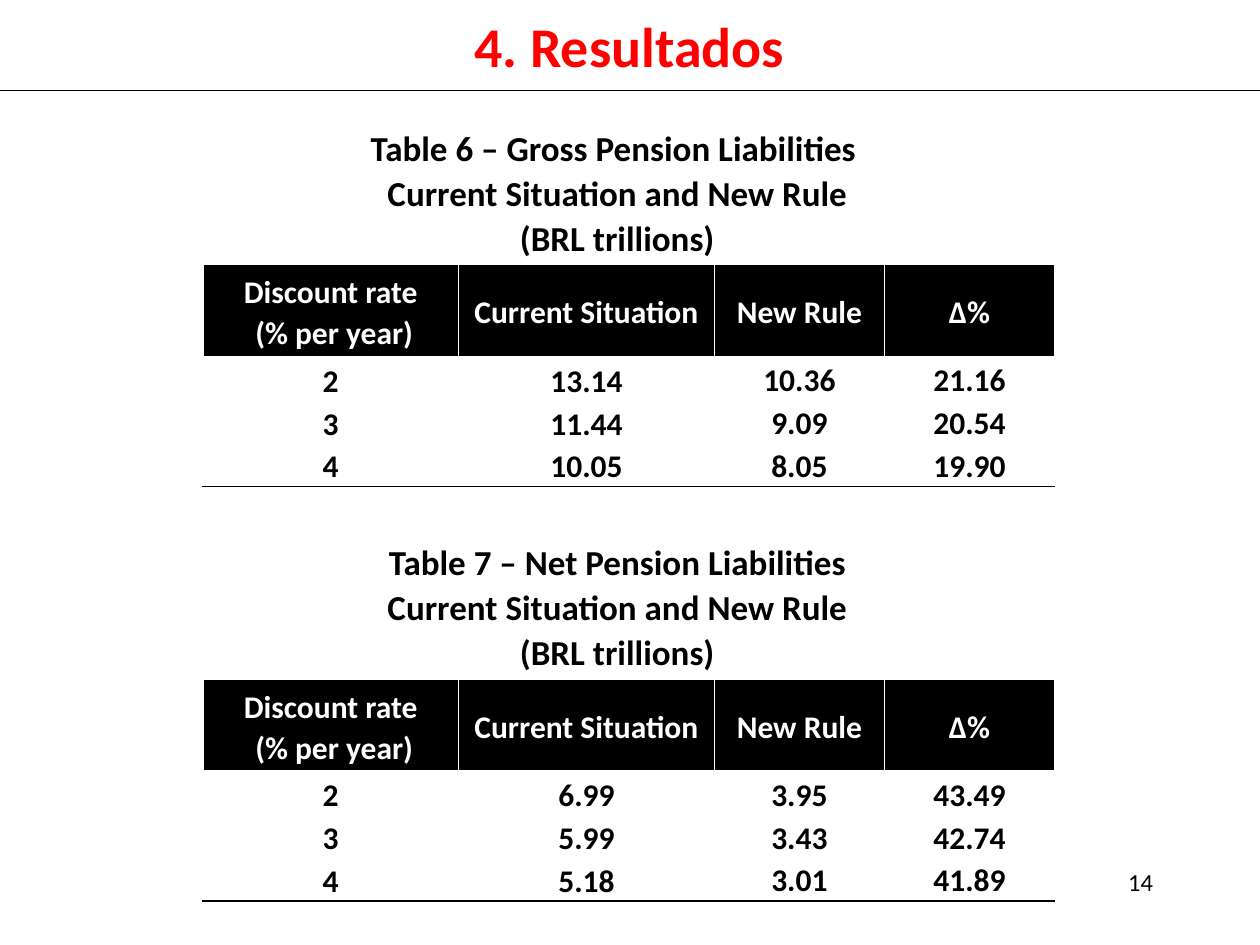
from dataclasses import dataclass

from lxml.etree import SubElement
from pptx import Presentation
from pptx.dml.color import RGBColor
from pptx.enum.shapes import MSO_CONNECTOR
from pptx.enum.text import MSO_ANCHOR, PP_ALIGN
from pptx.oxml.ns import qn
from pptx.slide import Slide
from pptx.table import _Cell
from pptx.text.text import TextFrame
from pptx.util import Inches, Pt

BLACK = RGBColor(0, 0, 0)
WHITE = RGBColor(255, 255, 255)
RED = RGBColor(255, 0, 0)
FONT = "Calibri"
LINE_SPACING = 1.07

COLUMN_WIDTHS = (2.03, 2.03, 1.35, 1.35)
HEADER_HEIGHT = 0.72
BODY_HEIGHT = 0.34
TABLE_LEFT = 1.61
CAPTION_HEIGHT = 1.17
HEADERS = ("Discount rate\n (% per year)", "Current Situation", "New Rule", "Δ%")


@dataclass(frozen=True)
class LiabilityTable:
    caption: str
    top: float
    rows: tuple[tuple[str, ...], ...]


LIABILITY_TABLES = (
    LiabilityTable(
        "Table 6 – Gross Pension Liabilities ",
        0.93,
        (
            ("2", "13.14", "10.36", "21.16"),
            ("3", "11.44", "9.09", "20.54"),
            ("4", "10.05", "8.05", "19.90"),
        ),
    ),
    LiabilityTable(
        "Table 7 – Net Pension Liabilities",
        4.22,
        (
            ("2", "6.99", "3.95", "43.49"),
            ("3", "5.99", "3.43", "42.74"),
            ("4", "5.18", "3.01", "41.89"),
        ),
    ),
)


def write_text(frame: TextFrame, text: str, size: float, color: RGBColor,
               bold: bool = True, alignment: PP_ALIGN = PP_ALIGN.CENTER,
               spacing: float = LINE_SPACING) -> None:
    frame.text = text
    for paragraph in frame.paragraphs:
        paragraph.alignment = alignment
        paragraph.line_spacing = spacing
        paragraph.font.name = FONT
        paragraph.font.size = Pt(size)
        paragraph.font.bold = bold
        paragraph.font.color.rgb = color


def add_text_box(slide: Slide, left: float, top: float, width: float,
                 height: float) -> TextFrame:
    box = slide.shapes.add_textbox(
        Inches(left), Inches(top), Inches(width), Inches(height))
    box.text_frame.word_wrap = True
    return box.text_frame


def set_border(cell: _Cell, side: str, color: RGBColor, width: float) -> None:
    properties = cell._tc.get_or_add_tcPr()
    border = SubElement(properties, qn(f"a:ln{side}"), w=str(Pt(width)))
    fill = SubElement(border, qn("a:solidFill"))
    SubElement(fill, qn("a:srgbClr"), val=str(color))


def set_margins(cell: _Cell, is_header: bool, column: int) -> None:
    if column >= 2:
        cell.margin_left = cell.margin_right = 0
        cell.margin_top = cell.margin_bottom = 0
    elif not is_header:
        cell.margin_top = Inches(0.01)
        cell.margin_bottom = 0


def style_cell(cell: _Cell, text: str, row: int, column: int,
               last_row: int) -> None:
    is_header = row == 0
    set_border(cell, "L", WHITE, 1)
    set_border(cell, "R", WHITE, 1)
    set_border(cell, "T", WHITE, 3 if row == 1 else 1)
    set_border(cell, "B", BLACK if row == last_row else WHITE,
               3 if is_header else 1)
    if is_header:
        cell.fill.solid()
        cell.fill.fore_color.rgb = BLACK
    else:
        cell.fill.background()
    cell.vertical_anchor = MSO_ANCHOR.MIDDLE
    set_margins(cell, is_header, column)
    write_text(cell.text_frame, text, 18, WHITE if is_header else BLACK)


def add_liability_table(slide: Slide, liability: LiabilityTable) -> None:
    rows = (HEADERS, *liability.rows)
    heights = [HEADER_HEIGHT] + [BODY_HEIGHT] * len(liability.rows)
    table = slide.shapes.add_table(
        len(rows), len(HEADERS), Inches(TABLE_LEFT),
        Inches(liability.top + CAPTION_HEIGHT),
        Inches(sum(COLUMN_WIDTHS)), Inches(sum(heights))).table
    table.horz_banding = False
    for column, width in zip(table.columns, COLUMN_WIDTHS):
        column.width = Inches(width)
    for row, height in zip(table.rows, heights):
        row.height = Inches(height)
    for row_index, texts in enumerate(rows):
        for column_index, text in enumerate(texts):
            style_cell(table.cell(row_index, column_index), text,
                       row_index, column_index, len(rows) - 1)

    caption = add_text_box(slide, 2.4, liability.top, 5, CAPTION_HEIGHT)
    write_text(
        caption,
        f"{liability.caption}\nCurrent Situation and New Rule\n(BRL trillions)",
        20, BLACK)


def add_title(slide: Slide) -> None:
    rule = slide.shapes.add_connector(
        MSO_CONNECTOR.STRAIGHT, 0, Inches(0.72), Inches(10), Inches(0.72))
    rule.line.color.rgb = BLACK
    rule.line.width = Pt(0.75)
    SubElement(rule._element.spPr, qn("a:effectLst"))

    title = add_text_box(slide, 0.12, 0.08, 9.75, 0.56)
    title.margin_left = title.margin_right = Inches(0.02)
    title.margin_top = title.margin_bottom = Inches(0.01)
    title.vertical_anchor = MSO_ANCHOR.MIDDLE
    write_text(title, "4. Resultados", 32, RED, spacing=1.0)


def main() -> None:
    presentation = Presentation()
    presentation.slide_width = Inches(10)
    presentation.slide_height = Inches(7.5)
    slide = presentation.slides.add_slide(presentation.slide_layouts[6])

    page_number = add_text_box(slide, 7.17, 6.83, 2.08, 0.5)
    write_text(page_number, "14", 14, BLACK, bold=False,
               alignment=PP_ALIGN.RIGHT, spacing=1.0)
    add_title(slide)
    for liability in LIABILITY_TABLES:
        add_liability_table(slide, liability)
    presentation.save("out.pptx")


if __name__ == "__main__":
    main()
